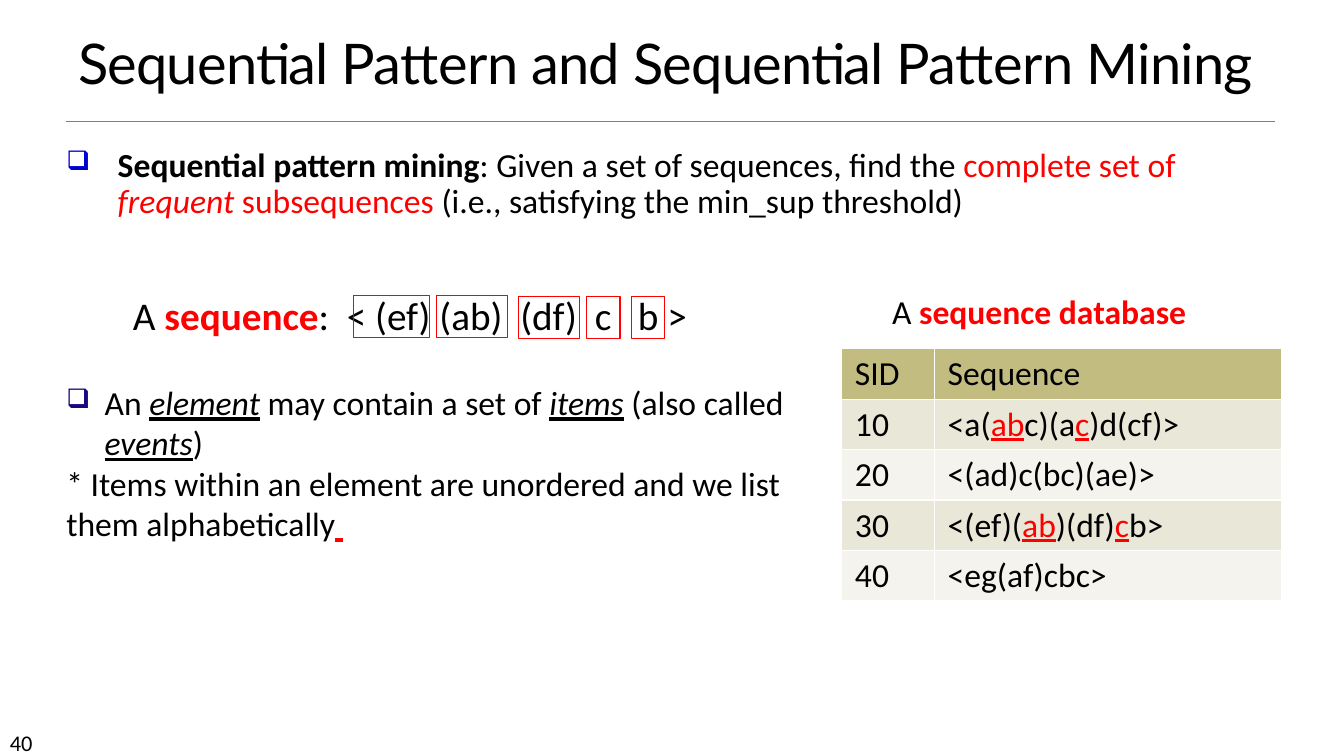
"""Build the slide on sequential pattern mining."""
from dataclasses import dataclass

from lxml import etree
from pptx import Presentation
from pptx.dml.color import RGBColor
from pptx.enum.shapes import MSO_CONNECTOR, MSO_SHAPE
from pptx.enum.text import MSO_ANCHOR, PP_ALIGN
from pptx.oxml.ns import qn
from pptx.util import Inches, Pt

LINE = MSO_CONNECTOR.STRAIGHT
RECTANGLE = MSO_SHAPE.RECTANGLE
BOTTOM = MSO_ANCHOR.BOTTOM
CENTER = PP_ALIGN.CENTER
BLACK, RED, GRAY = "000000", "FF0000", "808080"
HEADER_FILL, ROW_FILLS = "C2BC80", ("E9E7D8", "F4F3ED")


@dataclass(frozen=True)
class Span:
    text: str
    color: str = BLACK
    bold: bool = False
    italic: bool = False
    underline: bool = False


@dataclass(frozen=True)
class Para:
    spans: tuple[Span, ...]
    size: float = 24
    bullet_color: str = ""
    indent: float = 0
    line_spacing: float = 1.0
    space_before: float = 0


@dataclass(frozen=True)
class TextBox:
    left: float
    top: float
    width: float
    height: float
    paras: tuple[Para, ...]
    wrap: bool = True


@dataclass(frozen=True)
class Frame:
    left: float
    top: float
    width: float


def term(text: str) -> Span:
    return Span(text, italic=True, underline=True)


def match(text: str) -> Span:
    return Span(text, RED, underline=True)


TEXT_BOXES = (
    TextBox(0, 7.18, 1.17, 0.3, (Para((Span("40"),), 16),)),
    TextBox(0.56, 1.42, 12.33, 0.89, (
        Para((Span("Sequential pattern mining", bold=True),
              Span(": Given a set of sequences, find the "),
              Span("complete set of ", RED),
              Span("frequent ", RED, italic=True),
              Span("subsequences ", RED),
              Span("(i.e., satisfying the min_sup threshold)")),
             bullet_color="0000CC", indent=0.51, line_spacing=0.9, space_before=6),)),
    TextBox(8.75, 2.84, 3.23, 0.5, (
        Para((Span("A "), Span("sequence database", RED, bold=True))),), wrap=False),
    TextBox(0.56, 3.74, 8, 1.72, (
        Para((Span("An "), term("element"), Span(" may contain a set of "),
              term("items"), Span(" (also called "), term("events"), Span(")")),
             bullet_color="170981", indent=0.38),
        Para((Span("* Items within an element are unordered and we list them alphabetically"),
              Span(" ", RED, italic=True, underline=True))))),
    TextBox(1.22, 2.84, 5.81, 0.57, (
        Para((Span("A "), Span("sequence", RED, bold=True),
              Span(":  < (ef) (ab)  (df)  c   b >")), 28),)),
)
ELEMENT_FRAMES = (
    Frame(3.51, 2.93, 0.75), Frame(4.33, 2.93, 0.7), Frame(5.14, 2.94, 0.61),
    Frame(5.82, 2.94, 0.33), Frame(6.26, 2.94, 0.33),
)
DATABASE = (
    ("SID", (Span("Sequence"),)),
    ("10", (Span("<a("), match("ab"), Span("c)(a"), match("c"), Span(")d(cf)>"))),
    ("20", (Span("<(ad)c(bc)(ae)>"),)),
    ("30", (Span("<(ef)("), match("ab"), Span(")(df)"), match("c"), Span("b>"))),
    ("40", (Span("<eg(af)cbc>"),)),
)


def rgb(color: str) -> RGBColor:
    return RGBColor.from_string(color)


def add_bullet(paragraph, color: str, indent: float) -> None:
    properties = paragraph._p.get_or_add_pPr()
    properties.set("marL", str(Inches(indent)))
    properties.set("indent", str(-Inches(indent)))
    bullet_color = etree.SubElement(properties, qn("a:buClr"))
    etree.SubElement(bullet_color, qn("a:srgbClr"), val=color)
    etree.SubElement(properties, qn("a:buSzPct"), val="80000")
    etree.SubElement(properties, qn("a:buChar"), char="❑")


def fill_paragraph(paragraph, para: Para, font_name: str = "Calibri") -> None:
    if para.bullet_color:
        add_bullet(paragraph, para.bullet_color, para.indent)
    paragraph.line_spacing = para.line_spacing
    paragraph.space_before = Pt(para.space_before)
    paragraph.font.name = font_name
    paragraph.font.size = Pt(para.size)
    for span in para.spans:
        run = paragraph.add_run()
        run.text = span.text
        run.font.color.rgb = rgb(span.color)
        run.font.bold = span.bold
        run.font.italic = span.italic
        run.font.underline = span.underline


def add_title(page) -> None:
    title = page.shapes.title
    title.left, title.top = Inches(-0.33), Inches(0.37)
    title.width, title.height = Inches(14), Inches(0.63)
    title.text_frame.vertical_anchor = BOTTOM
    paragraph = title.text_frame.paragraphs[0]
    paragraph.alignment = CENTER
    heading = Span("Sequential Pattern and Sequential Pattern Mining ")
    fill_paragraph(paragraph, Para((heading,), 40, line_spacing=0.85), "Lato")
    paragraph.runs[0].font._element.set("spc", "-50")


def add_rule(page) -> None:
    rule = page.shapes.add_connector(LINE, Inches(0.65), Inches(1.2), Inches(12.65), Inches(1.2))
    rule.line.color.rgb = rgb(GRAY)
    rule.line.width = Pt(0.5)
    etree.SubElement(rule._element.spPr, qn("a:effectLst"))


def add_text_box(page, box: TextBox) -> None:
    shape = page.shapes.add_textbox(
        Inches(box.left), Inches(box.top), Inches(box.width), Inches(box.height))
    frame = shape.text_frame
    frame.word_wrap = box.wrap
    for index, para in enumerate(box.paras):
        paragraph = frame.add_paragraph() if index else frame.paragraphs[0]
        fill_paragraph(paragraph, para)


def add_element_frame(page, frame: Frame) -> None:
    shape = page.shapes.add_shape(
        RECTANGLE, Inches(frame.left), Inches(frame.top), Inches(frame.width), Inches(0.42))
    shape.shadow.inherit = False
    shape.fill.background()
    shape.line.color.rgb = rgb(RED)
    shape.line.width = Pt(0.75)


def add_database(page) -> None:
    table = page.shapes.add_table(
        len(DATABASE), 2, Inches(8.35), Inches(3.46), Inches(4.36), Inches(2.5)).table
    table.columns[0].width = Inches(0.92)
    table.columns[1].width = Inches(3.44)
    for row, (sid, sequence) in enumerate(DATABASE):
        fill = ROW_FILLS[(row - 1) % 2] if row else HEADER_FILL
        for column, spans in enumerate(((Span(sid),), sequence)):
            cell = table.cell(row, column)
            cell.margin_left = cell.margin_right = Inches(0.13)
            cell.fill.solid()
            cell.fill.fore_color.rgb = rgb(fill)
            fill_paragraph(cell.text_frame.paragraphs[0], Para(spans))


def main() -> None:
    deck = Presentation()
    deck.slide_width, deck.slide_height = Inches(13.33), Inches(7.5)
    page = deck.slides.add_slide(deck.slide_layouts[5])
    add_rule(page)
    add_title(page)
    for box in TEXT_BOXES:
        add_text_box(page, box)
    for frame in ELEMENT_FRAMES:
        add_element_frame(page, frame)
    add_database(page)
    deck.save("out.pptx")


if __name__ == "__main__":
    main()
